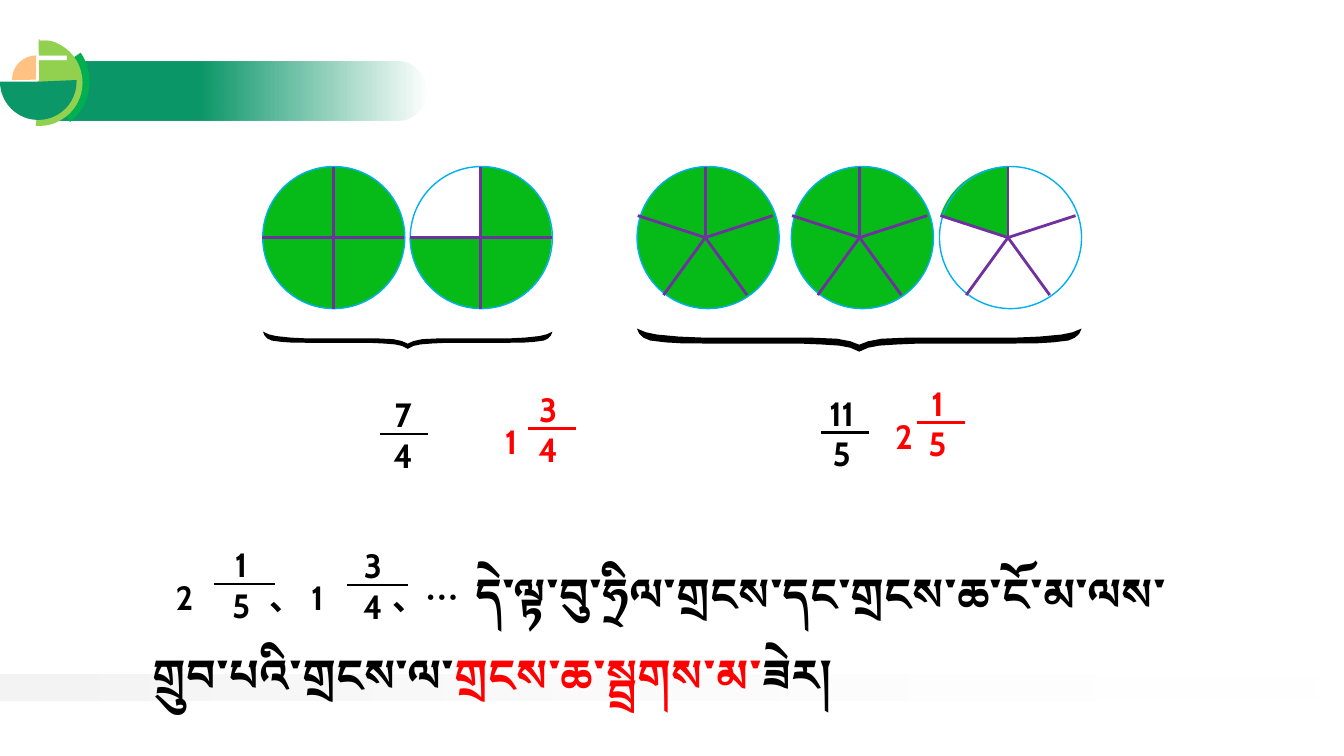
from math import cos, radians, sin

from lxml.etree import SubElement
from pptx import Presentation
from pptx.dml.color import RGBColor
from pptx.enum.shapes import MSO_CONNECTOR, MSO_SHAPE
from pptx.enum.text import PP_ALIGN
from pptx.oxml import parse_xml
from pptx.oxml.ns import nsdecls, qn
from pptx.util import Pt

FONT = "Cabin"
BLACK, WHITE, RED = "000000", "FFFFFF", "FF0000"
TEAL, GREEN, PURPLE, BLUE = "0C9769", "06BA17", "7030A0", "00B0F0"

# Badge sectors: left, top, size, start and end in degrees, colour
BADGE = [
    (-9.4, 21.6, 73.4, 325.76, 51.6, "00B050"),
    (-2.9, 28.1, 61.9, 269.1, 94.4, "92D050"),
    (0, 31, 54.7, 357.6, 180, TEAL),
    (8.6, 39.6, 34.6, 179, 269.5, "FFC283"),
]
SECTION = "二"

# Circles: centre x, hub shift, parts, shaded parts (None means all)
CIRCLES = [
    (238.4, -0.4, 4, None),
    (343.8, -0.4, 4, [0, 1, 2]),
    (505.8, -2, 5, None),
    (616, -2, 5, None),
    (721.8, -1.8, 5, [4]),
]
CIRCLE_Y, RADIUS = 169.7, 50.75

# Braces: left, top, width, height
BRACES = [(187.9, 236.9, 206.7, 12.3), (455, 234.7, 317.6, 16.5)]
# Left half of a brace, as shares of half its width and of its height
BRACE_OUTER = [(0, 0), (0.01, 0.22), (0.03, 0.4), (0.06, 0.52), (0.13, 0.6),
               (0.2, 0.64), (0.32, 0.65), (0.73, 0.65), (0.83, 0.69),
               (0.91, 0.74), (0.96, 0.83), (1, 1)]
BRACE_INNER = [(1, 0.7), (0.96, 0.55), (0.9, 0.44), (0.8, 0.4), (0.7, 0.39),
               (0.29, 0.39), (0.19, 0.35), (0.09, 0.26), (0.04, 0.16)]

# Fractions: numerator, denominator, centre x, top, bar left, bar length, colour
FRACTIONS = [
    ("1", "5", 172.2, 385.2, 152.6, 44, BLACK),
    ("3", "4", 266.4, 385.9, 247.7, 44, BLACK),
    ("7", "4", 288, 278, 271.4, 34.4, BLACK),
    ("11", "5", 601.2, 276.9, 586.1, 34.4, BLACK),
    ("3", "4", 391.6, 274.3, 377.1, 34.4, RED),
    ("1", "5", 669.6, 269.8, 655.2, 34.4, RED),
]
# Whole parts of the mixed numbers: text, left, top
WHOLES = [("1", 353.5, 297.4), ("2", 632.2, 293.8)]

# Definition: text, size, colour, extra letter spacing (room for the fractions)
DEFINITION = [
    ("2", 24, BLACK, 0),
    (" ", 24, BLACK, 43.2),
    ("、1", 24, BLACK, 0),
    (" ", 24, BLACK, 37.8),
    ("、… ", 24, BLACK, 0),
    ("དེ་ལྟ་བུ་ཧྲིལ་གྲངས་དང་གྲངས་ཆ་ངོ་མ་ལས་གྲུབ་པའི་གྲངས་ལ་", 32, BLACK, 0),
    ("གྲངས་ཆ་སྦྲགས་མ་", 32, RED, 0),
    ("ཟེར།", 32, BLACK, 0),
]
DEFINITION_INDENT = 16.2

presentation = Presentation()
presentation.slide_width, presentation.slide_height = Pt(960), Pt(540)
slide = presentation.slides.add_slide(presentation.slide_layouts[6])
shapes = slide.shapes


def rgb(colour):
    return RGBColor.from_string(colour)


def style(shape, fill=None, line=None):
    shape.shadow.inherit = False
    if fill:
        shape.fill.solid()
        shape.fill.fore_color.rgb = rgb(fill)
    else:
        shape.fill.background()
    if line:
        shape.line.color.rgb = rgb(line)
        shape.line.width = Pt(1)
    else:
        shape.line.fill.background()


def preset(kind, left, top, width, height, fill=None, line=None):
    shape = shapes.add_shape(kind, Pt(left), Pt(top), Pt(width), Pt(height))
    style(shape, fill, line)
    return shape


def fade(shape, stops, angle):
    """Fill with a gradient; stops are (position %, colour, opacity %)."""
    marks = "".join(
        f'<a:gs pos="{position * 1000}"><a:srgbClr val="{colour}">'
        f'<a:alpha val="{opacity * 1000}"/></a:srgbClr></a:gs>'
        for position, colour, opacity in stops)
    properties = shape.element.spPr
    properties.replace(properties.find(qn("a:noFill")), parse_xml(
        f'<a:gradFill {nsdecls("a")} rotWithShape="1"><a:gsLst>{marks}</a:gsLst>'
        f'<a:lin ang="{angle * 60000}" scaled="0"/></a:gradFill>'))


def line(x1, y1, x2, y2, colour):
    connector = shapes.add_connector(
        MSO_CONNECTOR.STRAIGHT, Pt(x1), Pt(y1), Pt(x2), Pt(y2))
    connector.line.color.rgb = rgb(colour)
    connector.line.width = Pt(2)
    SubElement(connector.element.spPr, qn("a:effectLst"))


def polygon(points, fill):
    corners = [(Pt(x), Pt(y)) for x, y in points]
    builder = shapes.build_freeform(*corners[0])
    builder.add_line_segments(corners[1:], close=True)
    style(builder.convert_to_shape(), fill)


def text_box(left, top, width, height):
    frame = shapes.add_textbox(Pt(left), Pt(top), Pt(width), Pt(height)).text_frame
    frame.word_wrap = True
    return frame


def set_font(paragraph, colour):
    font = paragraph.font
    font.name, font.size, font.bold = FONT, Pt(24), True
    font.color.rgb = rgb(colour)


def label(rows, left, top, width, height, colour, align=PP_ALIGN.LEFT):
    frame = text_box(left, top, width, height)
    frame.text = "\n".join(rows)
    for paragraph in frame.paragraphs:
        paragraph.alignment = align
        set_font(paragraph, colour)


def rim(x, degrees):
    angle = radians(degrees)
    return x + RADIUS * cos(angle), CIRCLE_Y + RADIUS * sin(angle)


def divided_circle(x, hub_shift, parts, shaded):
    hub, step = x + hub_shift, 360 / parts
    for part in shaded or []:
        start = part * step - 90
        arc = [rim(hub, start + step * i / 24) for i in range(25)]
        polygon([(hub, CIRCLE_Y)] + arc, GREEN)
    preset(MSO_SHAPE.OVAL, x - RADIUS, CIRCLE_Y - RADIUS, 2 * RADIUS, 2 * RADIUS,
           None if shaded else GREEN, BLUE)
    even = parts % 2 == 0
    for part in range(parts // 2 if even else parts):
        angle = part * step - 90
        start = rim(hub, angle + 180) if even else (hub, CIRCLE_Y)
        line(*start, *rim(hub, angle), PURPLE)


def brace(left, top, width, height):
    def mirrored(half):
        return [(2 - x, y) for x, y in reversed(half)]

    outline = BRACE_OUTER + mirrored(BRACE_OUTER) + mirrored(BRACE_INNER) + BRACE_INNER
    polygon([(left + x * width / 2, top + y * height) for x, y in outline], BLACK)


banner = preset(MSO_SHAPE.ROUND_2_SAME_RECTANGLE, 150.5, -68.4, 41.8, 266.4)
banner.adjustments[0] = 0.5
banner.rotation = 90
fade(banner, [(39, TEAL, 100), (100, TEAL, 0)], 270)

for left, top, size, start, end, colour in BADGE:
    sector = preset(MSO_SHAPE.PIE, left, top, size, size, colour)
    # Pie angles count 60000 to the degree, adjustments 100000 to the unit
    sector.adjustments[0], sector.adjustments[1] = start * 0.6, end * 0.6

strip = preset(MSO_SHAPE.ROUNDED_RECTANGLE, -9.4, 481.7, 969.4, 18.7)
strip.adjustments[0] = 0.5
fade(strip, [(0, "D9D9D9", 31), (100, "F2F2F2", 0)], 0)

label([SECTION], 18, 15.8, 65.5, 36, WHITE)

definition = text_box(102.2, 381.6, 780.5, 118.8).paragraphs[0]
definition.line_spacing = 1.5
definition._p.get_or_add_pPr().set("indent", str(Pt(DEFINITION_INDENT)))
set_font(definition, BLACK)
for text, size, colour, spacing in DEFINITION:
    run = definition.add_run()
    run.text = text
    run.font.size = Pt(size)
    run.font.color.rgb = rgb(colour)
    if spacing:
        run.font._element.set("spc", str(round(spacing * 100)))

for circle in CIRCLES:
    divided_circle(*circle)
for bounds in BRACES:
    brace(*bounds)

for numerator, denominator, x, top, bar_left, bar_length, colour in FRACTIONS:
    label([numerator, denominator], x - 27, top, 54, 65.5, colour, PP_ALIGN.CENTER)
    line(bar_left, top + 32, bar_left + bar_length, top + 32, colour)
for whole, left, top in WHOLES:
    label([whole], left, top, 30.2, 36, RED)

presentation.save("out.pptx")
